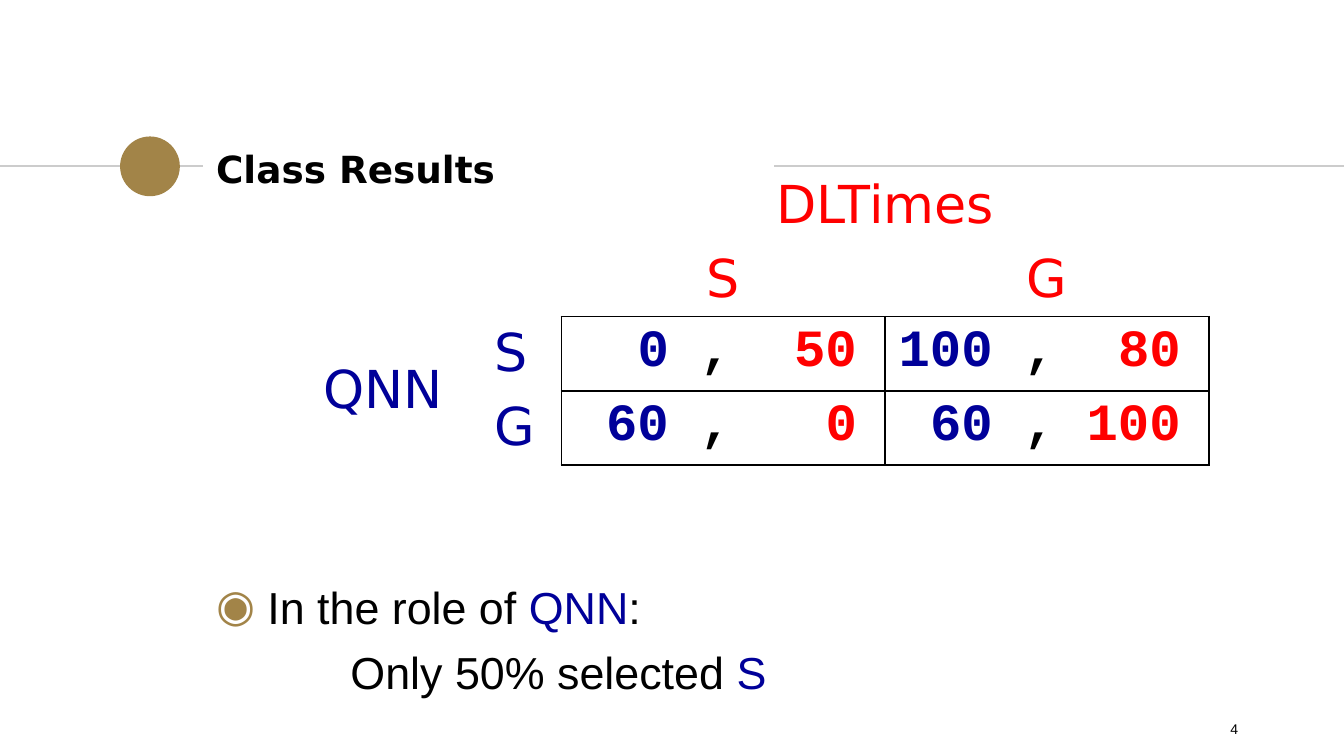
from lxml import etree
from pptx import Presentation
from pptx.dml.color import RGBColor
from pptx.enum.shapes import MSO_CONNECTOR, MSO_SHAPE
from pptx.enum.text import MSO_ANCHOR, MSO_AUTO_SIZE, PP_ALIGN
from pptx.oxml.ns import qn
from pptx.util import Cm, Pt

STRAIGHT = MSO_CONNECTOR.STRAIGHT
OVAL = MSO_SHAPE.OVAL
TOP, MIDDLE, BOTTOM = MSO_ANCHOR.TOP, MSO_ANCHOR.MIDDLE, MSO_ANCHOR.BOTTOM
LEFT, CENTER, RIGHT = PP_ALIGN.LEFT, PP_ALIGN.CENTER, PP_ALIGN.RIGHT
NO_FIT = MSO_AUTO_SIZE.NONE
NO_GRID_STYLE = "{2D5ABB26-0587-4C30-8999-92F81FD0307C}"

ROW_PLAYER, COLUMN_PLAYER = "QNN", "DLTimes"
STRATEGIES = ["S", "G"]
PAYOFFS = [[(0, 50), (100, 80)], [(60, 0), (60, 100)]]


def rgb(value):
    return RGBColor.from_string(value)


def child(parent, tag, **attributes):
    return etree.SubElement(parent, qn(tag), attributes)


class ResultsSlide:
    BLACK, BLUE, RED = "000000", "000099", "FF0000"
    GOLD, GREY = "A28448", "CCCCCC"
    BODY, HEADING, MONO = "Arial", "DejaVu Sans", "Courier New"

    def __init__(self, deck):
        self.slide = deck.slides.add_slide(deck.slide_layouts[1])

    def place(self, shape, left, top, width, height):
        shape.left, shape.top = Cm(left), Cm(top)
        shape.width, shape.height = Cm(width), Cm(height)

    def fill_text(self, paragraph, runs, size, font, bold=False, align=LEFT):
        paragraph.alignment = align
        paragraph.font.size = Pt(size)
        paragraph.font.name = font
        paragraph.font.bold = bold
        for text, color in runs:
            run = paragraph.add_run()
            run.text = text
            run.font.color.rgb = rgb(color)

    def rule(self, start, end, y):
        line = self.slide.shapes.add_connector(STRAIGHT, Cm(start), Cm(y), Cm(end), Cm(y))
        line.line.color.rgb = rgb(self.GREY)
        line.line.width = Pt(0.75)
        child(line._element.spPr, "a:effectLst")

    def dot(self, left, top, size):
        dot = self.slide.shapes.add_shape(OVAL, Cm(left), Cm(top), Cm(size), Cm(size))
        dot.shadow.inherit = False
        dot.fill.solid()
        dot.fill.fore_color.rgb = rgb(self.GOLD)
        dot.line.fill.background()

    def frame(self, shape, anchor):
        frame = shape.text_frame
        frame.word_wrap = True
        frame.auto_size = NO_FIT
        frame.vertical_anchor = anchor
        return frame

    def title(self, text, *box):
        title = self.slide.shapes.title
        self.place(title, *box)
        frame = self.frame(title, MIDDLE)
        self.fill_text(frame.paragraphs[0], [(text, self.BLACK)], 20, self.HEADING, True)

    def body(self, items, *box):
        body = self.slide.placeholders[1]
        self.place(body, *box)
        frame = self.frame(body, TOP)
        frame.margin_top = frame.margin_bottom = Cm(0.25)
        for index, (runs, margin, bullet) in enumerate(items):
            paragraph = frame.add_paragraph() if index else frame.paragraphs[0]
            self.fill_text(paragraph, runs, 24, self.BODY)
            paragraph.space_before = Pt(0)
            paragraph.space_after = Pt(6)
            props = paragraph._p.get_or_add_pPr()
            props.set("marL", str(Cm(margin)))
            props.set("indent", str(-Cm(margin) if bullet else 0))
            marks = etree.Element("marks")
            if bullet:
                child(child(marks, "a:buClr"), "a:srgbClr", val=self.GOLD)
                child(marks, "a:buChar", char=bullet)
            else:
                child(marks, "a:buNone")
            default_font = props.find(qn("a:defRPr"))
            for mark in list(marks):
                default_font.addprevious(mark)

    def number(self, text, *box):
        number = self.slide.shapes.add_textbox(*map(Cm, box))
        frame = self.frame(number, MIDDLE)
        self.fill_text(frame.paragraphs[0], [(text, self.BLACK)], 7.5, self.BODY, align=RIGHT)

    def label(self, cell, text, color, align=CENTER, anchor=TOP):
        cell.vertical_anchor = anchor
        self.fill_text(cell.text_frame.paragraphs[0], [(text, color)], 28, self.HEADING, align=align)

    def payoff(self, cell, first, second):
        paragraph = cell.text_frame.paragraphs[0]
        runs = [(f"\t{first}", self.BLUE), (" ,\t", self.BLACK), (str(second), self.RED)]
        self.fill_text(paragraph, runs, 28, self.MONO, True)
        props = paragraph._p.get_or_add_pPr()
        tabs = etree.Element(qn("a:tabLst"))
        for stop in (2.96, 5.33):
            child(tabs, "a:tab", pos=str(Cm(stop)), algn="r")
        props.find(qn("a:defRPr")).addprevious(tabs)

    def border(self, cell, sides):
        props = cell._tc.get_or_add_tcPr()
        for index, side in enumerate(sides):
            line = etree.Element(qn(f"a:ln{side}"), w=str(Pt(1)))
            child(child(line, "a:solidFill"), "a:srgbClr", val=self.BLACK)
            props.insert(index, line)

    def matrix(self, left, top, widths, row_height):
        rows = 2 + len(STRATEGIES)
        holder = self.slide.shapes.add_table(
            rows, len(widths), Cm(left), Cm(top), Cm(sum(widths)), Cm(rows * row_height))
        table = holder.table
        table.first_row = table.horz_banding = False
        table._tbl.tblPr.find(qn("a:tableStyleId")).text = NO_GRID_STYLE
        for column, width in zip(table.columns, widths):
            column.width = Cm(width)
        for row in table.rows:
            row.height = Cm(row_height)
        for cell in table.iter_cells():
            cell.fill.background()

        table.cell(0, 2).merge(table.cell(0, 3))
        table.cell(2, 0).merge(table.cell(3, 0))
        self.label(table.cell(0, 2), COLUMN_PLAYER, self.RED, anchor=BOTTOM)
        self.label(table.cell(2, 0), ROW_PLAYER, self.BLUE, anchor=MIDDLE)
        for index, strategy in enumerate(STRATEGIES, 2):
            self.label(table.cell(1, index), strategy, self.RED)
            self.border(table.cell(1, index), "B")
            self.label(table.cell(index, 1), strategy, self.BLUE, LEFT, MIDDLE)
            self.border(table.cell(index, 1), "R")
        for row, pairs in enumerate(PAYOFFS, 2):
            for column, pair in enumerate(pairs, 2):
                self.payoff(table.cell(row, column), *pair)
                self.border(table.cell(row, column), "LRTB")


def main():
    deck = Presentation()
    deck.slide_width, deck.slide_height = Cm(25.4), Cm(14.29)
    page = ResultsSlide(deck)
    black, blue = page.BLACK, page.BLUE
    page.rule(0, 3.83, 3.14)
    page.dot(2.27, 2.58, 1.13)
    page.rule(14.63, 25.4, 3.14)
    page.number("4", 17.93, 13.39, 5.72, 0.76)
    page.title("Class Results", 3.83, 2.57, 10.78, 1.22)
    page.body([
        ([("In the role of ", black), (ROW_PLAYER, blue), (":", black)], 0.97, "◉"),
        ([("Only 50% selected ", black), ("S", blue)], 2.54, None),
    ], 3.83, 10.7, 18.92, 2.44)
    page.matrix(5.38, 3.18, [3.71, 1.52, 6.12, 6.12], 1.4)
    deck.save("out.pptx")


if __name__ == "__main__":
    main()
